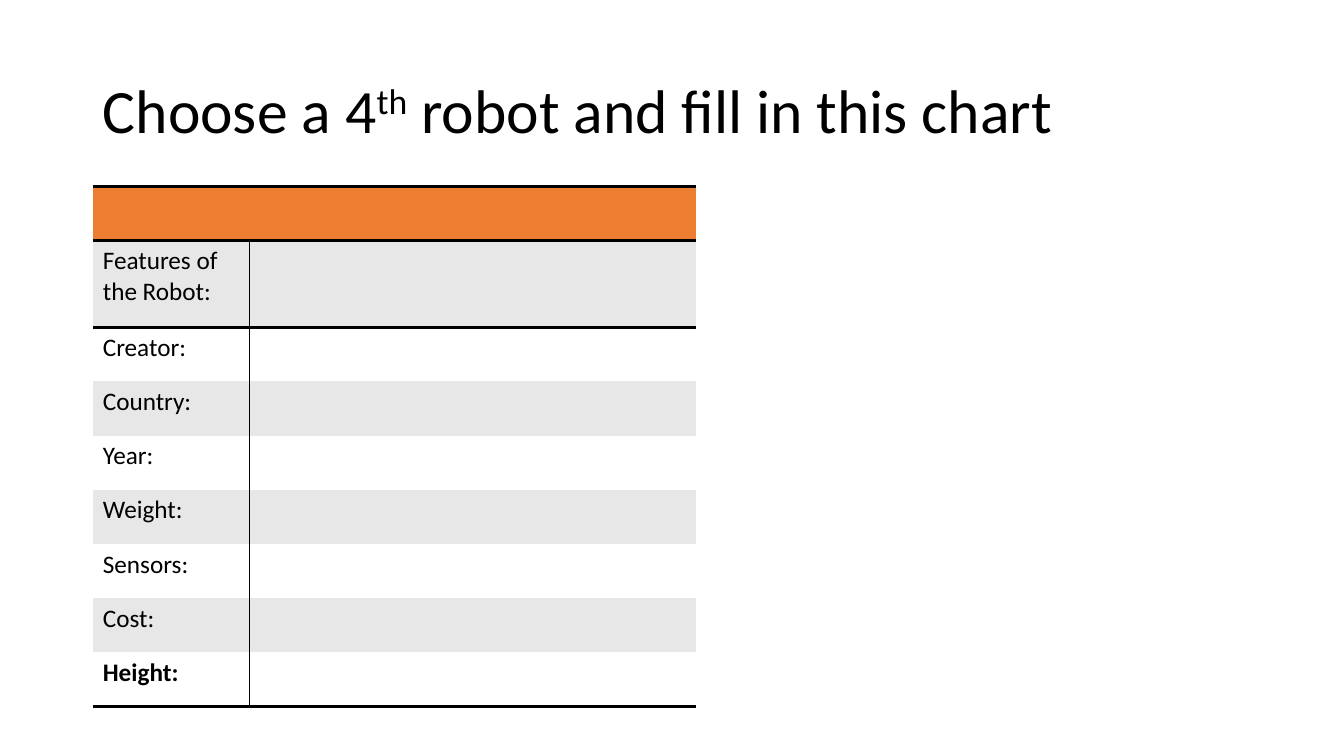
from dataclasses import dataclass

import lxml.etree
import pptx
import pptx.dml.color
import pptx.enum.text
import pptx.oxml.ns
import pptx.util

SLIDE_WIDTH, SLIDE_HEIGHT = 13.33, 7.5
NO_GRID_STYLE = "{2D5ABB26-0587-4C30-8999-92F81FD0307C}"
FEATURES = ["Features of the Robot:", "Creator:", "Country:", "Year:",
            "Weight:", "Sensors:", "Cost:", "Height:"]


@dataclass(frozen=True)
class Theme:
    font: str = "Calibri"
    title_size: int = 44
    body_size: int = 18
    ink: str = "000000"
    header: str = "ED7D31"
    band: str = "E7E7E7"
    plain: str = "FFFFFF"
    heavy_line: int = 2
    thin_line: int = 1


THEME = Theme()


def rgb(colour):
    return pptx.dml.color.RGBColor.from_string(colour)


def add_text(paragraph, text, size=THEME.body_size, bold=False, baseline=None):
    run = paragraph.add_run()
    run.text = text
    run.font.name = THEME.font
    run.font.size = pptx.util.Pt(size)
    run.font.bold = bold
    run.font.color.rgb = rgb(THEME.ink)
    if baseline is not None:
        run.font._element.set("baseline", str(baseline * 1000))


def set_borders(cell, **widths):
    """Draw the sides named L, R, T or B, each with its width in points."""
    qn = pptx.oxml.ns.qn
    properties = cell._tc.get_or_add_tcPr()
    sides = [side for side in "LRTB" if side in widths]
    for position, side in enumerate(sides):
        line = lxml.etree.Element(qn("a:ln" + side), w=str(pptx.util.Pt(widths[side])))
        fill = lxml.etree.SubElement(line, qn("a:solidFill"))
        lxml.etree.SubElement(fill, qn("a:srgbClr"), val=THEME.ink)
        properties.insert(position, line)


def place_title(slide, left, top, width, height):
    title = slide.shapes.title
    title.left, title.top, title.width, title.height = map(
        pptx.util.Inches, (left, top, width, height))
    frame = title.text_frame
    frame.word_wrap = True
    frame.auto_size = pptx.enum.text.MSO_AUTO_SIZE.NONE
    frame.vertical_anchor = pptx.enum.text.MSO_ANCHOR.MIDDLE
    heading = frame.paragraphs[0]
    heading.alignment = pptx.enum.text.PP_ALIGN.LEFT
    heading.line_spacing = 0.9
    add_text(heading, "Choose a 4", size=THEME.title_size)
    add_text(heading, "th", size=THEME.title_size, baseline=30)
    add_text(heading, " robot and fill in this chart", size=THEME.title_size)


def place_robot_chart(slide, left, top, width, height):
    """Add a header row above one row per feature; the first feature is taller."""
    row_count = len(FEATURES) + 1
    frame = slide.shapes.add_table(
        row_count, 2, *map(pptx.util.Inches, (left, top, width, height)))
    chart = frame.table
    chart.horz_banding = chart.first_row = False
    chart._tbl.tblPr.find(pptx.oxml.ns.qn("a:tableStyleId")).text = NO_GRID_STYLE

    label_share, tall_share = 0.26, 1.6
    for column, share in zip(chart.columns, (label_share, 1 - label_share)):
        column.width = pptx.util.Inches(width * share)
    unit = height / (row_count - 1 + tall_share)
    for index, row in enumerate(chart.rows):
        row.height = pptx.util.Inches(unit * (tall_share if index == 1 else 1))

    for index, row in enumerate(chart.rows):
        is_header, is_last = index == 0, index == row_count - 1
        banding = THEME.band if index % 2 else THEME.plain
        for cell, inner_side in zip(row.cells, "RL"):
            cell.fill.solid()
            cell.fill.fore_color.rgb = rgb(THEME.header if is_header else banding)
            borders = {} if is_header else {inner_side: THEME.thin_line}
            if is_header:
                borders["T"] = THEME.heavy_line
            if index == 1:
                borders["T"] = THEME.heavy_line
            if is_header or is_last:
                borders["B"] = THEME.heavy_line
            set_borders(cell, **borders)
        if not is_header:
            add_text(row.cells[0].text_frame.paragraphs[0],
                     FEATURES[index - 1], bold=is_last)


def main():
    deck = pptx.Presentation()
    deck.slide_width = pptx.util.Inches(SLIDE_WIDTH)
    deck.slide_height = pptx.util.Inches(SLIDE_HEIGHT)
    slide = deck.slides.add_slide(deck.slide_layouts[5])
    margin, title_top, title_height = 0.92, 0.4, 1.45
    place_title(slide, margin, title_top, SLIDE_WIDTH - 2 * margin, title_height)
    place_robot_chart(slide, margin, title_top + title_height, 5.98, 5.16)
    deck.save("out.pptx")


if __name__ == "__main__":
    main()
